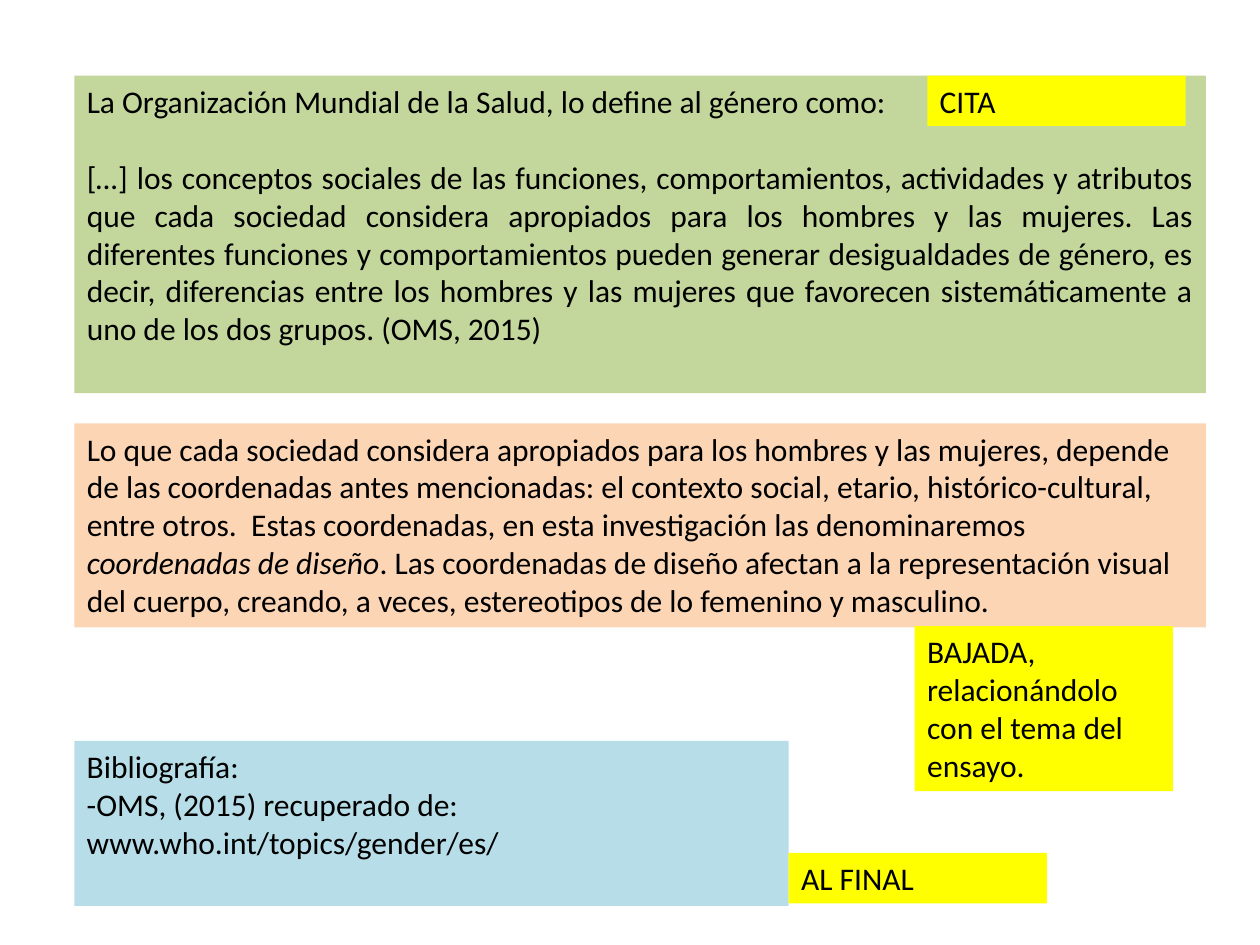
from pptx import Presentation
from pptx.dml.color import RGBColor
from pptx.enum.text import MSO_AUTO_SIZE, PP_ALIGN
from pptx.util import Inches, Pt

GREEN, PEACH, BLUE, YELLOW = "C3D69B", "FCD5B5", "B7DEE8", "FFFF00"
MARGIN, PANEL_WIDTH, LABEL_WIDTH = 0.59, 8.98, 2.05


def color(value):
    """Turn a hex string into a colour."""
    return RGBColor.from_string(value)


def write(paragraph, text, size=18, font="Calibri", ink="000000", italic=False):
    """Append formatted text to a paragraph."""
    run = paragraph.add_run()
    run.text = text
    run.font.size = Pt(size)
    run.font.name = font
    run.font.italic = italic
    run.font.color.rgb = color(ink)


def add_panel(slide, left, top, width, height, fill, *lines):
    """Add a filled text box and return its paragraphs, one per line."""
    panel = slide.shapes.add_textbox(
        Inches(left), Inches(top), Inches(width), Inches(height)
    )
    panel.fill.solid()
    panel.fill.fore_color.rgb = color(fill)
    frame = panel.text_frame
    frame.word_wrap = True
    frame.auto_size = MSO_AUTO_SIZE.NONE
    for index, line in enumerate(lines):
        paragraph = frame.add_paragraph() if index else frame.paragraphs[0]
        write(paragraph, line)
    return frame.paragraphs


def add_label(slide, left, top, height, text):
    """Add a yellow label that names a part of the essay."""
    add_panel(slide, left, top, LABEL_WIDTH, height, YELLOW, text)


def add_quotation(slide):
    """Add the introduction and the justified quotation."""
    introduction, quotation = add_panel(
        slide, MARGIN, 0.6, PANEL_WIDTH, 2.52, GREEN,
        "La Organización Mundial de la Salud, lo define al género como:",
        "[",
    )
    quotation.alignment = PP_ALIGN.JUSTIFY
    quotation.space_before = Pt(22)
    write(quotation, "…", italic=True)
    write(
        quotation,
        "] los conceptos sociales de las funciones, comportamientos, actividades "
        "y atributos que cada sociedad considera apropiados para los hombres y las "
        "mujeres. Las diferentes funciones y comportamientos pueden generar "
        "desigualdades de género, es decir, diferencias entre los hombres y las "
        "mujeres que favorecen sistemáticamente a uno de los dos grupos. (OMS, 2015)",
    )


def add_discussion(slide):
    """Add the paragraph that ties the quotation to the essay."""
    (discussion,) = add_panel(
        slide, MARGIN, 3.36, PANEL_WIDTH, 1.62, PEACH,
        "Lo que cada sociedad considera apropiados para los hombres y las mujeres, "
        "depende de las coordenadas antes mencionadas: el contexto social, etario, "
        "histórico-cultural, entre otros.  Estas coordenadas, en esta investigación "
        "las denominaremos ",
    )
    write(discussion, "coordenadas de diseño", italic=True)
    write(
        discussion,
        ". Las coordenadas de diseño afectan a la representación visual del cuerpo, "
        "creando, a veces, estereotipos de lo femenino y masculino.",
    )


def main():
    """Build and save the slide."""
    presentation = Presentation()
    presentation.slide_width = Inches(10)
    presentation.slide_height = Inches(7.5)
    slide = presentation.slides.add_slide(presentation.slide_layouts[6])

    add_quotation(slide)
    add_panel(
        slide, MARGIN, 5.88, 5.67, 1.31, BLUE,
        "Bibliografía:",
        "-OMS, (2015) recuperado de: www.who.int/topics/gender/es/",
    )
    add_discussion(slide)
    add_label(slide, 7.36, 0.6, 0.4, "CITA")
    add_label(slide, 7.26, 4.97, 1.31, "BAJADA, relacionándolo con el tema del ensayo.")
    add_label(slide, 6.26, 6.77, 0.4, "AL FINAL")

    presentation.save("out.pptx")


if __name__ == "__main__":
    main()
